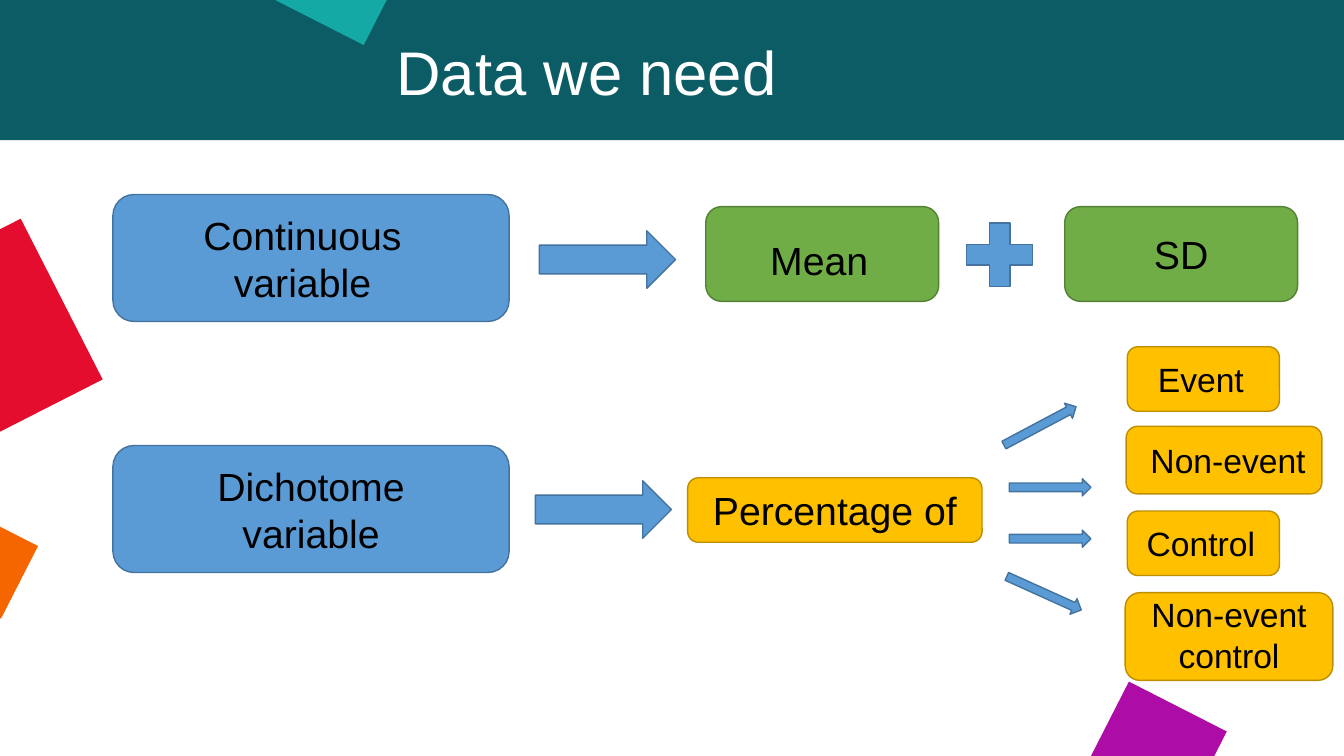
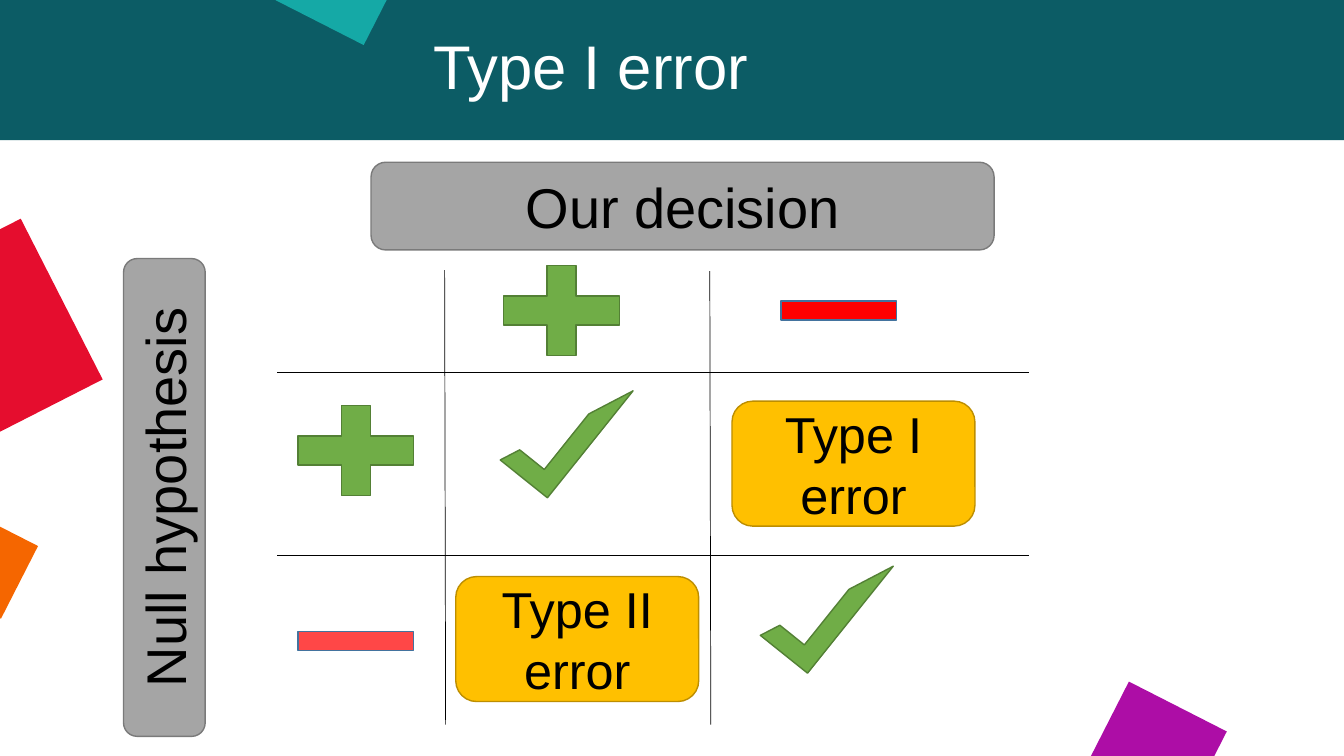
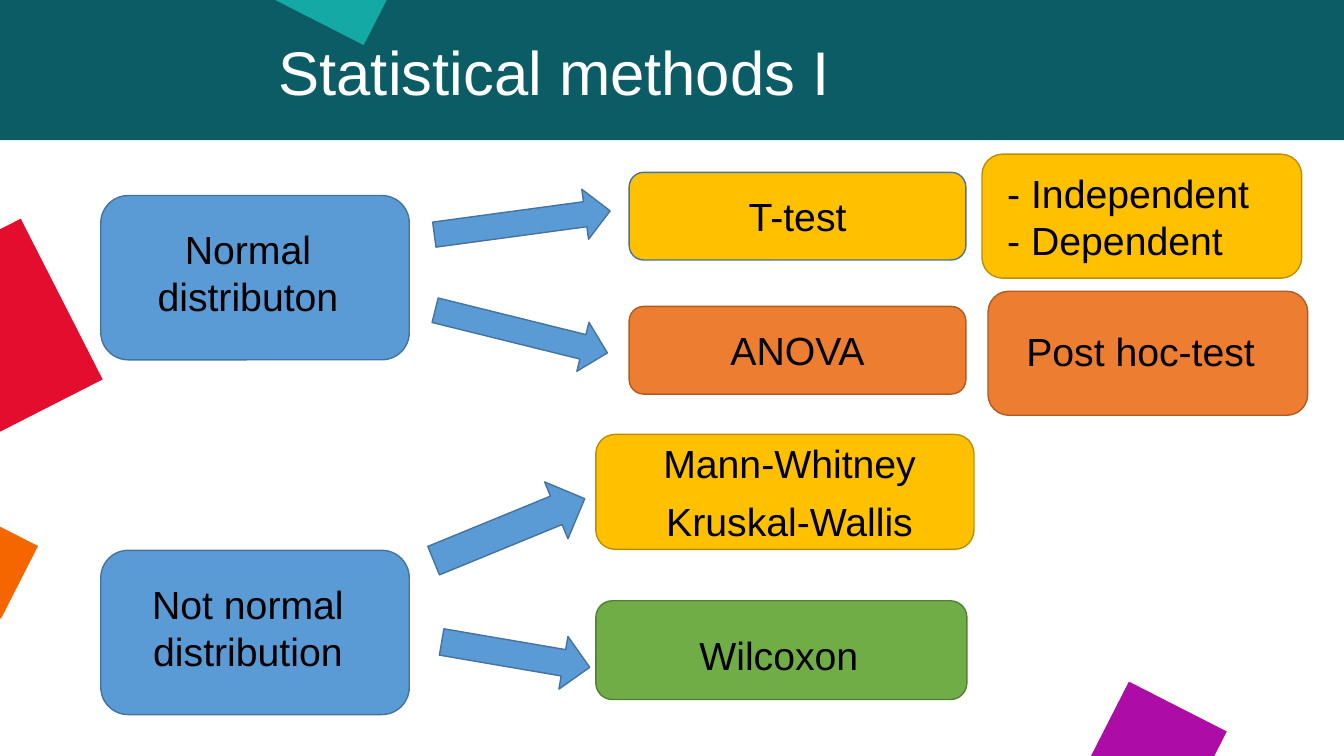
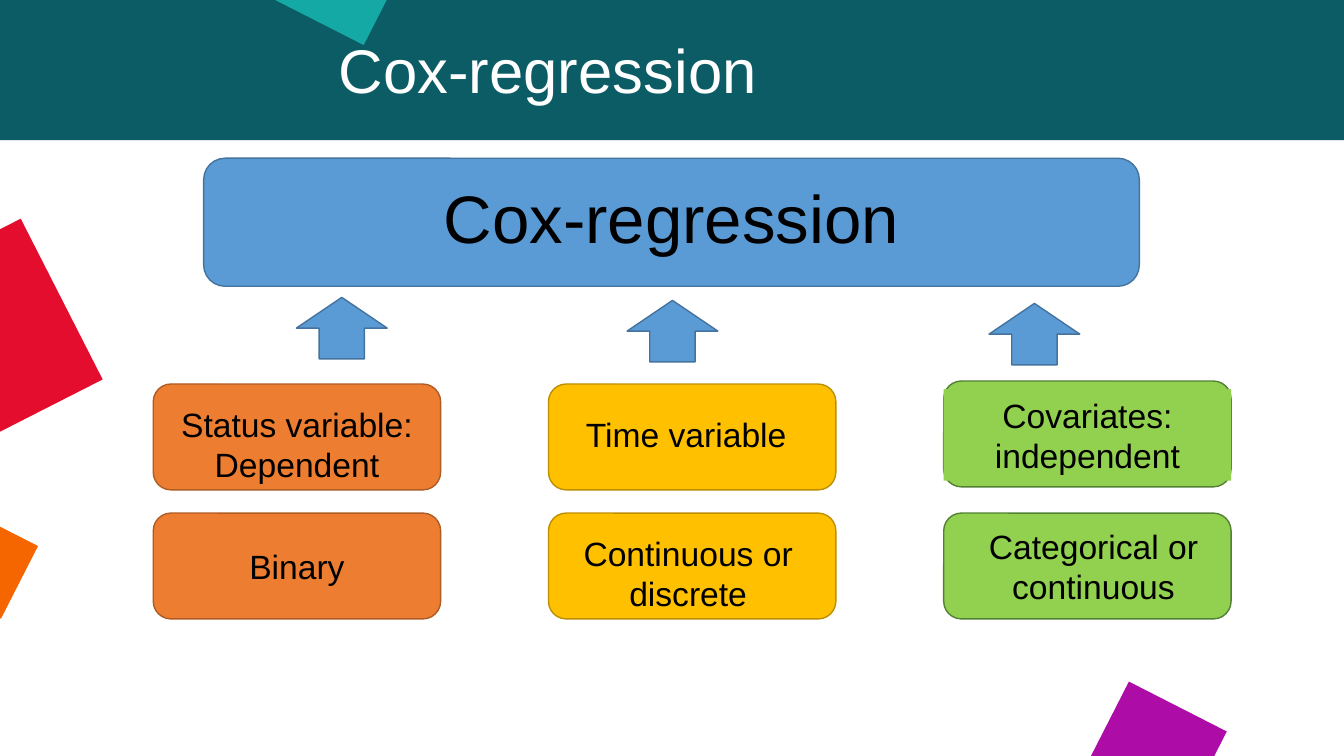
from dataclasses import dataclass

from lxml import etree
from pptx import Presentation, util as u
from pptx.dml.color import RGBColor
from pptx.enum import shapes, text
from pptx.oxml.ns import qn

EMU_PER_PX = 9144  # 100 px to the inch
FONT = "Arial"
BLACK, WHITE = "000000", "FFFFFF"
S = shapes.MSO_SHAPE
CENTER, LEFT = text.PP_ALIGN.CENTER, text.PP_ALIGN.LEFT
MIDDLE, TOP = text.MSO_ANCHOR.MIDDLE, text.MSO_ANCHOR.TOP

# Fill and outline pairs
BLUE = ("5B9BD5", "43739E")
GREEN = ("70AD47", "538035")
LIME = ("92D050", "538035")
YELLOW = ("FFC000", "BD8E00")
YELLOW_BLUE = ("FFC000", "43739E")
ORANGE = ("ED7D31", "AF5C24")
GREY = ("A5A5A5", "7A7A7A")
RED = ("FF0000", "43739E")
PALE_RED = ("FF4747", "43739E")

PAD = (10, 5, 10, 5)  # left, top, right, bottom


@dataclass
class Item:
    """A preset shape with an optional label, one paragraph a line."""
    x: int
    y: int
    w: int
    h: int
    colors: tuple[str, str | None]
    label: str = ""
    size: int = 28
    pad: tuple[int, int, int, int] = PAD
    kind: S = S.ROUNDED_RECTANGLE
    rot: float = 0
    align: text.PP_ALIGN = CENTER
    gap: int = 0


@dataclass
class Page:
    title: str
    title_box: tuple[int, int, int, int]
    items: list[Item]
    rules: tuple[tuple[int, int, int, int], ...] = ()


def px(n: int) -> u.Emu:
    return u.Emu(n * EMU_PER_PX)


def rgb(color: str) -> RGBColor:
    return RGBColor.from_string(color)


def put(obj, values: dict) -> None:
    for name, value in values.items():
        setattr(obj, name, value)


def write(sp, content: str, size: int, color: str, anchor=MIDDLE,
          pad=PAD, align=CENTER, gap: int = 0) -> None:
    tf = sp.text_frame
    sides = ("margin_left", "margin_top", "margin_right", "margin_bottom")
    put(tf, {"word_wrap": True, "vertical_anchor": anchor,
             **{side: px(n) for side, n in zip(sides, pad)}})
    for i, line in enumerate(content.split("\n")):
        p = tf.add_paragraph() if i else tf.paragraphs[0]
        put(p, {"alignment": align, "space_before": u.Pt(gap if i else 0)})
        r = p.add_run()
        r.text = line
        put(r.font, {"name": FONT, "size": u.Pt(size)})
        r.font.color.rgb = rgb(color)


def draw(s, item: Item):
    sp = s.shapes.add_shape(item.kind, *map(px, (item.x, item.y, item.w, item.h)))
    sp.shadow.inherit = False
    sp.rotation = item.rot
    fill, line = item.colors
    sp.fill.solid()
    sp.fill.fore_color.rgb = rgb(fill)
    if line:
        sp.line.color.rgb = rgb(line)
        sp.line.width = u.Pt(1)
    else:
        sp.line.fill.background()
    if item.label:
        write(sp, item.label, item.size, BLACK, pad=item.pad,
              align=item.align, gap=item.gap)
    return sp


def draw_rule(s, ends: tuple[int, int, int, int]) -> None:
    c = s.shapes.add_connector(shapes.MSO_CONNECTOR.STRAIGHT, *map(px, ends))
    c.line.color.rgb = rgb(BLACK)
    c.line.width = u.Pt(0.5)
    etree.SubElement(c._element.spPr, qn("a:effectLst"))


def arrow(x: int, y: int, w: int, h: int, rot: float = 0) -> Item:
    return Item(x, y, w, h, BLUE, kind=S.RIGHT_ARROW, rot=rot)


def sign(x: int, y: int, kind: S, colors: tuple[str, str]) -> Item:
    return Item(x, y, 156, 122 if kind == S.MATH_PLUS else 80, colors, kind=kind)


def check(x: int, y: int) -> Item:
    return Item(x, y, 60, 136, GREEN, kind=S.HALF_FRAME, rot=218.7)


# Header band and tilted squares, shared by all slides
DECOR = [
    Item(x, y, w, h, (color, None), kind=S.RECTANGLE, rot=rot)
    for x, y, w, h, color, rot in (
        (0, 0, 1333, 139, "0C5C65", 0),
        (-109, 248, 180, 179, "E50D2E", 333),
        (1089, 695, 109, 109, "AD0DA6", 27),
        (-61, 518, 85, 81, "F56600", 27),
        (291, -73, 98, 101, "15A9A6", 27),
    )
]

DATA = Page("Data we need", (63, 29, 1038, 84), [
    Item(112, 193, 393, 126, BLUE, "Continuous variable", pad=(22, 5, 39, 5)),
    Item(112, 442, 393, 126, BLUE, "Dichotome variable", pad=(30, 5, 30, 5)),
    Item(700, 205, 231, 94, GREEN, "Mean", pad=(10, 16, 16, 5)),
    Item(1056, 205, 231, 94, GREEN, "SD"),
    Item(947, 210, 89, 86, BLUE, kind=S.MATH_PLUS),
    arrow(535, 229, 135, 57),
    arrow(531, 477, 135, 57),
    Item(682, 474, 292, 64, YELLOW, "Percentage of"),
    Item(1118, 344, 151, 64, YELLOW, "Event", 24, (5, 5, 10, 5)),
    Item(1117, 423, 194, 67, YELLOW, "Non-event", 24, (13, 5, 5, 5)),
    Item(1118, 507, 151, 64, YELLOW, "Control", 24, (5, 5, 10, 5)),
    Item(1116, 588, 206, 87, YELLOW, "Non-event control", 24, (10, 0, 10, 4)),
    arrow(991, 414, 81, 17, 332),
    arrow(1001, 475, 81, 17),
    arrow(1001, 526, 81, 17),
    arrow(995, 580, 81, 17, 24.3),
])

ERRORS = Page("Type I error", (98, 23, 976, 84), [
    Item(-74, 453, 474, 81, GREY, "Null hypothesis", 40, rot=270),
    Item(368, 161, 618, 87, GREY, "Our decision", 40),
    sign(275, 386, S.MATH_PLUS, GREEN),
    sign(275, 596, S.MATH_MINUS, PALE_RED),
    sign(754, 268, S.MATH_MINUS, RED),
    sign(479, 247, S.MATH_PLUS, GREEN),
    check(532, 354),
    check(790, 528),
    Item(452, 572, 241, 124, YELLOW, "Type II error", 36),
    Item(726, 398, 241, 124, YELLOW, "Type I error", 36),
], rules=(
    (275, 551, 1021, 551), (275, 369, 1021, 369),
    (441, 268, 442, 719), (704, 269, 705, 719),
))

METHODS = Page("Statistical methods I", (31, 29, 1038, 84), [
    Item(100, 194, 306, 163, BLUE, "Normal distributon", pad=(10, 5, 24, 16)),
    Item(100, 546, 306, 163, BLUE, "Not normal distribution", pad=(10, 5, 24, 16)),
    Item(624, 171, 334, 87, YELLOW_BLUE, "T-test"),
    Item(624, 304, 334, 87, ORANGE, "ANOVA"),
    Item(974, 153, 317, 123, YELLOW, "- Independent - Dependent",
         pad=(19, 5, 39, 5), align=LEFT),
    Item(980, 289, 317, 123, ORANGE, "Post hoc-test",
         pad=(32, 5, 5, 9), align=LEFT),
    Item(591, 431, 375, 114, YELLOW, "Mann-Whitney\nKruskal-Wallis",
         pad=(19, 0, 10, 0), gap=8),
    Item(591, 596, 368, 98, GREEN, "Wilcoxon", pad=(10, 14, 15, 5)),
    arrow(430, 196, 176, 50, 352.3),
    arrow(429, 304, 176, 50, 13.9),
    arrow(424, 495, 162, 61, 337.7),
    arrow(437, 623, 149, 53, 9.7),
])

COLUMNS = [152 + 392 * i for i in range(3)]
STATUS, TIME, COVARIATES = COLUMNS

COX = Page("Cox-regression", (25, 27, 1037, 84), [
    Item(202, 157, 928, 127, BLUE, "Cox-regression", 48, (10, 0, 10, 12)),
    *(Item(x, y, 90, 61, BLUE, kind=S.UP_ARROW)
      for x, y in ((294, 295), (622, 298), (981, 301))),
    Item(STATUS, 381, 285, 105, ORANGE, "Status variable: Dependent", 24,
         (10, 14, 10, 0)),
    Item(TIME, 381, 285, 105, YELLOW, "Time variable", 24, (5, 5, 17, 10)),
    Item(COVARIATES, 378, 285, 105, LIME),
    Item(COVARIATES, 386, 285, 91, (LIME[0], None), "Covariates: independent",
         24, kind=S.RECTANGLE),
    Item(STATUS, 509, 285, 105, ORANGE, "Binary", 24),
    Item(TIME, 509, 285, 105, YELLOW, "Continuous or discrete", 24,
         (5, 14, 13, 0)),
    Item(COVARIATES, 509, 285, 105, LIME, "Categorical or continuous", 24,
         (17, 5, 5, 5)),
])


def decorate_master(prs, s) -> None:
    """Draw the shared shapes and move them to the slide master."""
    tree = prs.slide_master.shapes.element
    for i, item in enumerate(DECOR):
        sp = draw(s, item)
        sp.element.nvSpPr.cNvPr.set("id", str(100 + i))
        tree.append(sp.element)


def build(s, page: Page) -> None:
    title = s.shapes.add_textbox(*map(px, page.title_box))
    write(title, page.title, 44, WHITE, anchor=TOP)
    for ends in page.rules:
        draw_rule(s, ends)
    for item in page.items:
        draw(s, item)


def main() -> None:
    prs = Presentation()
    put(prs, {"slide_width": px(1333), "slide_height": px(750)})
    for i, page in enumerate((DATA, ERRORS, METHODS, COX)):
        s = prs.slides.add_slide(prs.slide_layouts[6])
        if i == 0:
            decorate_master(prs, s)
        build(s, page)
    prs.save("out.pptx")


if __name__ == "__main__":
    main()
